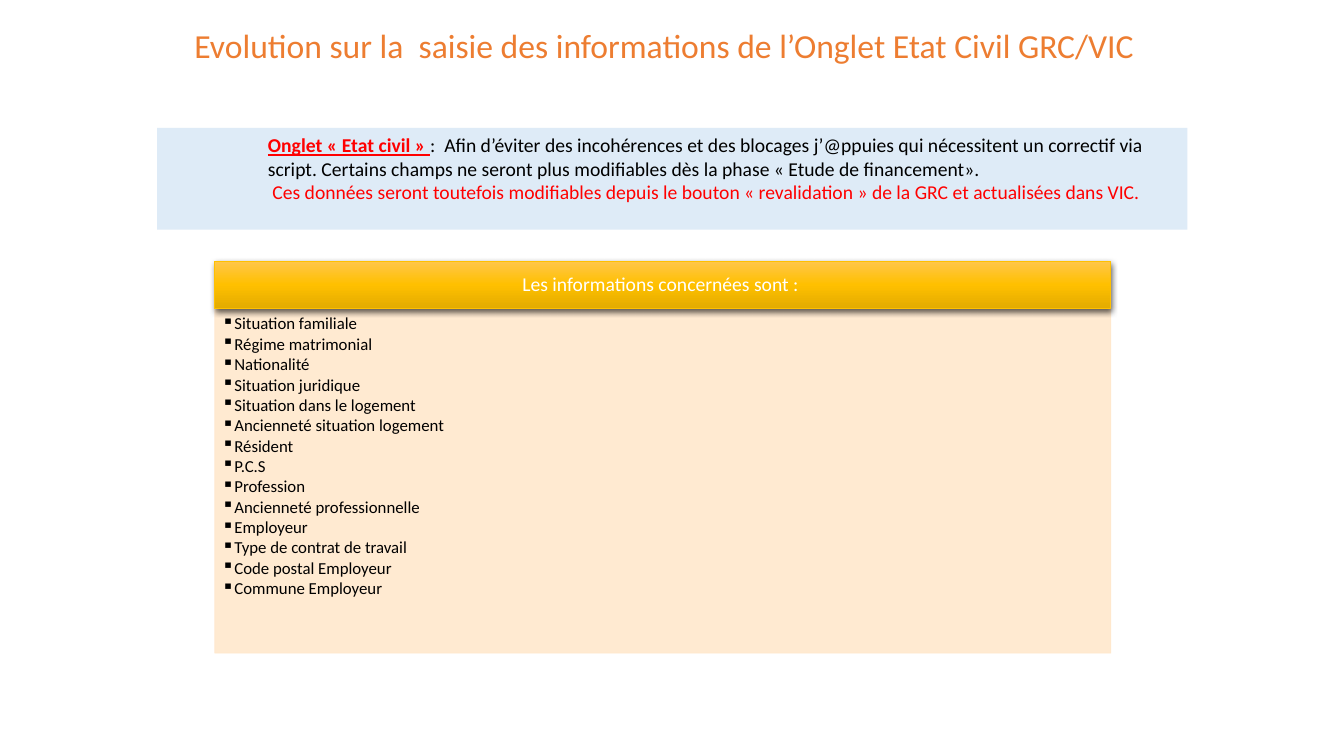
"""Build the slide on the civil status fields that become locked."""
import copy
from dataclasses import dataclass, field

import lxml.etree
import pptx
import pptx.dml.color
import pptx.enum.shapes
import pptx.enum.text
import pptx.oxml
import pptx.oxml.ns
import pptx.util

Pt = pptx.util.Pt
ALIGN = pptx.enum.text.PP_ALIGN
ANCHOR = pptx.enum.text.MSO_ANCHOR
COLORS = {
    "title": "ED7D31", "alert": "FF0000", "body": "000000", "header_text": "FFFFFF",
    "intro": "DEEBF7", "header_top": "FFC64B", "header": "FFC000",
    "header_bottom": "E3AB00", "list": "FFE8CC",
}


@dataclass
class Run:
    text: str
    color: str = "body"
    size: float = 14
    font: dict = field(default_factory=dict)


@dataclass
class Paragraph:
    runs: list[Run]
    spacing: dict = field(default_factory=dict)
    indent: float = 0
    hanging: float = 0
    bullet: str = ""


@dataclass
class Panel:
    box: tuple[float, float, float, float]
    paragraphs: list[Paragraph]
    frame: dict = field(default_factory=dict)
    fill: str = ""
    line: str = ""
    opacity: int = 100
    gradient: tuple[str, ...] = ()
    shadow: bool = False


def rgb(name: str) -> pptx.dml.color.RGBColor:
    """Return the named colour."""
    return pptx.dml.color.RGBColor.from_string(COLORS[name])


def apply(target: object, values: dict) -> None:
    """Set every format value on the target."""
    for name, value in values.items():
        setattr(target, name, value)


def add_child(parent: lxml.etree._Element, tag: str, **attributes: str) -> lxml.etree._Element:
    """Append a DrawingML element."""
    child = lxml.etree.SubElement(parent, pptx.oxml.ns.qn(tag))
    for name, value in attributes.items():
        child.set(name, value)
    return child


def write_paragraph(paragraph: pptx.text.text._Paragraph, content: Paragraph) -> None:
    """Write the runs, indents and bullet of one paragraph."""
    properties = paragraph._p.get_or_add_pPr()
    properties.set("marL", str(Pt(content.indent)))
    properties.set("indent", str(Pt(-content.hanging)))
    apply(paragraph, content.spacing)
    if content.bullet:
        add_child(properties, "a:buChar", char=content.bullet)
    for part in content.runs:
        run = paragraph.add_run()
        run.text = part.text
        apply(run.font, {"name": "Calibri", "size": Pt(part.size), **part.font})
        run.font.color.rgb = rgb(part.color)


def paint_gradient(shape: pptx.shapes.autoshape.Shape, names: tuple[str, ...]) -> None:
    """Fill the shape with evenly spaced colours from top to bottom."""
    shape.fill.gradient()
    shape.fill.gradient_angle = 270
    stops = shape._element.spPr.find(".//" + pptx.oxml.ns.qn("a:gsLst"))
    while len(stops) < len(names):
        stops.append(copy.deepcopy(stops[0]))
    for index, (stop, name) in enumerate(zip(shape.fill.gradient_stops, names)):
        stop.color.rgb = rgb(name)
        stop.position = index / (len(names) - 1)


def paint_panel(shape: pptx.shapes.autoshape.Shape, panel: Panel) -> None:
    """Apply the fill, outline, opacity and shadow."""
    shape.shadow.inherit = False
    if panel.gradient:
        paint_gradient(shape, panel.gradient)
    else:
        shape.fill.solid()
        shape.fill.fore_color.rgb = rgb(panel.fill)
    if panel.line:
        shape.line.color.rgb = rgb(panel.line)
        shape.line.width = Pt(0.5)
    else:
        shape.line.fill.background()
    properties = shape._element.spPr
    if panel.opacity < 100:
        for color in properties.iter(pptx.oxml.ns.qn("a:srgbClr")):
            add_child(color, "a:alpha", val=str(panel.opacity * 1000))
    if panel.shadow:
        effects = properties.find(pptx.oxml.ns.qn("a:effectLst"))
        shadow = add_child(effects, "a:outerShdw", blurRad=str(Pt(4.5)), dist=str(Pt(1.5)),
                           dir="5400000", algn="ctr", rotWithShape="0")
        color = add_child(shadow, "a:srgbClr", val=COLORS["body"])
        add_child(color, "a:alpha", val="63000")


def add_panel(slide: pptx.slide.Slide, panel: Panel) -> None:
    """Draw a painted panel, or a text box when no paint is given."""
    box = [Pt(length) for length in panel.box]
    if panel.fill or panel.gradient:
        shape = slide.shapes.add_shape(pptx.enum.shapes.MSO_SHAPE.RECTANGLE, *box)
        paint_panel(shape, panel)
    else:
        shape = slide.shapes.add_textbox(*box)
    frame = shape.text_frame
    apply(frame, {"word_wrap": True, "vertical_anchor": ANCHOR.TOP, **panel.frame})
    for index, content in enumerate(panel.paragraphs):
        write_paragraph(frame.add_paragraph() if index else frame.paragraphs[0], content)


FIELDS = (
    "Situation familiale", "Régime matrimonial", "Nationalité", "Situation juridique",
    "Situation dans le logement", "Ancienneté situation logement", "Résident", "P.C.S",
    "Profession", "Ancienneté professionnelle", "Employeur", "Type de contrat de travail",
    "Code postal Employeur", "Commune Employeur",
)
LEFT_ALIGNED = {"alignment": ALIGN.LEFT}
CENTERED = {"alignment": ALIGN.CENTER}
LIST_SPACING = {**LEFT_ALIGNED, "line_spacing": 0.9, "space_after": Pt(1.6)}
TABLE_LEFT, TABLE_WIDTH = 153.4, 640.1
HEADER_TOP, HEADER_HEIGHT = 186.5, 33.8

PANELS = (
    Panel((112.3, 91.4, 735.8, 72.7), [
        Paragraph([
            Run("Onglet « Etat civil » ", "alert", font={"bold": True, "underline": True}),
            Run(":  Afin d’éviter des incohérences et des blocages j’@ppuies qui nécessitent "
                "un correctif via script. Certains champs ne seront plus modifiables dès la "
                "phase « Etude de financement»."),
        ], LEFT_ALIGNED, indent=72),
        Paragraph([
            Run(" Ces données seront toutefois modifiables depuis le bouton « revalidation » "
                "de la GRC et actualisées dans VIC.", "alert"),
        ], LEFT_ALIGNED, indent=72),
    ], fill="intro"),
    Panel((TABLE_LEFT, HEADER_TOP + HEADER_HEIGHT, TABLE_WIDTH, 246.2), [
        Paragraph([Run(name, size=12)], LIST_SPACING, indent=9, hanging=9, bullet="▪")
        for name in FIELDS
    ], {"margin_left": Pt(5), "margin_top": Pt(5), "margin_right": Pt(6.5),
        "margin_bottom": Pt(7)}, fill="list", line="list", opacity=90),
    Panel((TABLE_LEFT, HEADER_TOP, TABLE_WIDTH, HEADER_HEIGHT), [
        Paragraph([Run("Les informations concernées sont : ", "header_text")],
                  {**CENTERED, "line_spacing": 0.9}),
    ], {"vertical_anchor": ANCHOR.MIDDLE, "margin_top": Pt(4), "margin_bottom": Pt(4)},
        line="header", gradient=("header_top", "header", "header_bottom"), shadow=True),
    Panel((15.8, 14.4, 928.1, 36), [
        Paragraph([Run("Evolution sur la  saisie des informations de l’Onglet Etat Civil "
                       "GRC/VIC  ", "title", 24)], CENTERED),
    ]),
)


def main() -> None:
    """Create the presentation and save it."""
    presentation = pptx.Presentation()
    apply(presentation, {"slide_width": Pt(960), "slide_height": Pt(540)})
    slide = presentation.slides.add_slide(presentation.slide_layouts[6])
    for panel in PANELS:
        add_panel(slide, panel)
    presentation.save("out.pptx")


if __name__ == "__main__":
    main()
